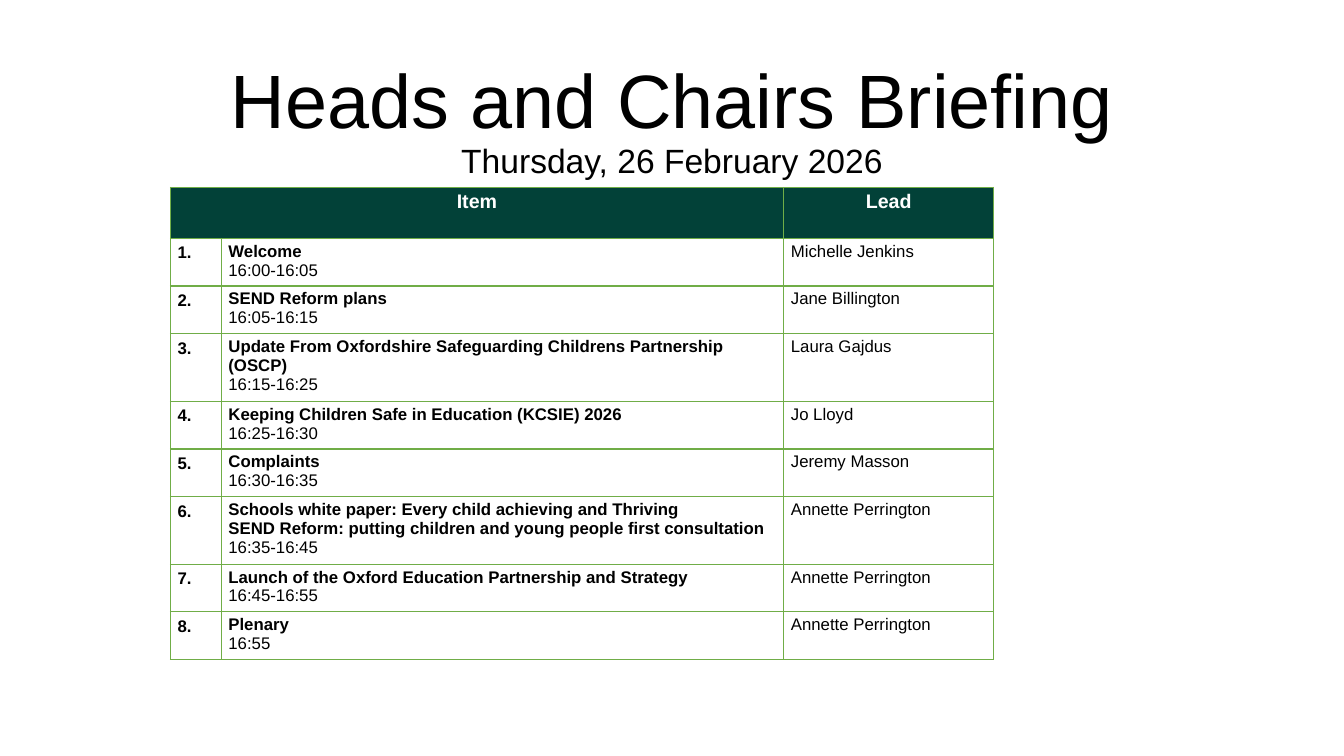
import dataclasses

import pptx
import pptx.dml.color
import pptx.enum.text
import pptx.oxml
import pptx.oxml.ns
import pptx.util

Pt = pptx.util.Pt
RGBColor = pptx.dml.color.RGBColor
PP_ALIGN = pptx.enum.text.PP_ALIGN


@dataclasses.dataclass(frozen=True)
class Theme:
    font: str = "Arial"
    text: str = "000000"
    header_text: str = "FFFFFF"
    header_fill: str = "024138"
    border: str = "70AD47"
    title_size: float = 54
    date_size: float = 24
    header_size: float = 14
    body_size: float = 12


THEME = Theme()
COLUMN_WIDTHS = (36.3, 401.8, 150.1)
HEADER_HEIGHT = 36.4
LINE_HEIGHT = 12.9
ROW_PADDING = 6.3

AGENDA = [
    (["Welcome"], "16:00-16:05", "Michelle Jenkins"),
    (["SEND Reform plans"], "16:05-16:15", "Jane Billington"),
    (["Update From Oxfordshire Safeguarding Childrens Partnership (OSCP)"],
     "16:15-16:25", "Laura Gajdus"),
    (["Keeping Children Safe in Education (KCSIE) 2026"], "16:25-16:30", "Jo Lloyd"),
    (["Complaints"], "16:30-16:35", "Jeremy Masson"),
    (["Schools white paper: Every child achieving and Thriving",
      "SEND Reform: putting children and young people first consultation"],
     "16:35-16:45", "Annette Perrington"),
    (["Launch of the Oxford Education Partnership and Strategy"],
     "16:45-16:55", "Annette Perrington"),
    (["Plenary"], "16:55", "Annette Perrington"),
]


def set_font(font, size, color, bold=False):
    font.name = THEME.font
    font.size = Pt(size)
    font.bold = bold
    font.color.rgb = RGBColor.from_string(color)


def add_title(slide, left, top, width, height):
    box = slide.shapes.add_textbox(Pt(left), Pt(top), Pt(width), Pt(height))
    frame = box.text_frame
    frame.word_wrap = True
    frame.vertical_anchor = pptx.enum.text.MSO_ANCHOR.MIDDLE
    paragraph = frame.paragraphs[0]
    paragraph.alignment = PP_ALIGN.CENTER
    paragraph.line_spacing = 0.9
    heading = paragraph.add_run()
    heading.text = "Heads and Chairs Briefing"
    set_font(heading.font, THEME.title_size, THEME.text)
    paragraph.add_line_break()
    date = paragraph.add_run()
    date.text = "Thursday, 26 February 2026"
    set_font(date.font, THEME.date_size, THEME.text)


def style_cell(cell):
    cell.margin_left = cell.margin_right = Pt(5.2)
    cell.margin_top = cell.margin_bottom = Pt(2.6)
    properties = cell._tc.get_or_add_tcPr()
    for side in ("lnL", "lnR", "lnT", "lnB"):
        properties.append(pptx.oxml.parse_xml(
            f'<a:{side} {pptx.oxml.ns.nsdecls("a")} w="{Pt(1)}"><a:solidFill>'
            f'<a:srgbClr val="{THEME.border}"/></a:solidFill></a:{side}>'))
    cell.fill.background()


def fill_header(cell, text):
    cell.fill.solid()
    cell.fill.fore_color.rgb = RGBColor.from_string(THEME.header_fill)
    cell.text = text
    paragraph = cell.text_frame.paragraphs[0]
    paragraph.alignment = PP_ALIGN.CENTER
    set_font(paragraph.font, THEME.header_size, THEME.header_text, True)


def fill_body(cell, bold_lines, plain_lines):
    lines = bold_lines + plain_lines
    cell.text = "\n".join(lines)
    for index, paragraph in enumerate(cell.text_frame.paragraphs):
        set_font(paragraph.font, THEME.body_size, THEME.text, index < len(bold_lines))


def add_agenda(slide, left, top):
    heights = [HEADER_HEIGHT]
    for topics, _, _ in AGENDA:
        line_count = 1 + sum(2 if len(topic) > 64 and len(topics) == 1 else 1
                             for topic in topics)
        heights.append(ROW_PADDING + LINE_HEIGHT * line_count)
    table = slide.shapes.add_table(
        len(heights), len(COLUMN_WIDTHS), Pt(left), Pt(top),
        Pt(sum(COLUMN_WIDTHS)), Pt(sum(heights))).table
    table.first_row = table.horz_banding = False
    for column, width in zip(table.columns, COLUMN_WIDTHS):
        column.width = Pt(width)
    for row, height in zip(table.rows, heights):
        row.height = Pt(height)
        for cell in row.cells:
            style_cell(cell)

    table.cell(0, 0).merge(table.cell(0, 1))
    fill_header(table.cell(0, 0), "Item")
    fill_header(table.cell(0, 2), "Lead")
    for number, (topics, time, lead) in enumerate(AGENDA, start=1):
        number_cell = table.cell(number, 0)
        fill_body(number_cell, [f"{number}."], [])
        number_cell.text_frame.paragraphs[0].line_spacing = Pt(14.6)
        fill_body(table.cell(number, 1), topics, [time])
        fill_body(table.cell(number, 2), [], [lead])


def main():
    presentation = pptx.Presentation()
    presentation.slide_width = Pt(960)
    presentation.slide_height = Pt(540)
    slide = presentation.slides.add_slide(presentation.slide_layouts[6])
    add_title(slide, 66, 28.8, 828, 116.6)
    add_agenda(slide, 121.7, 133.9)
    presentation.save("out.pptx")


if __name__ == "__main__":
    main()
